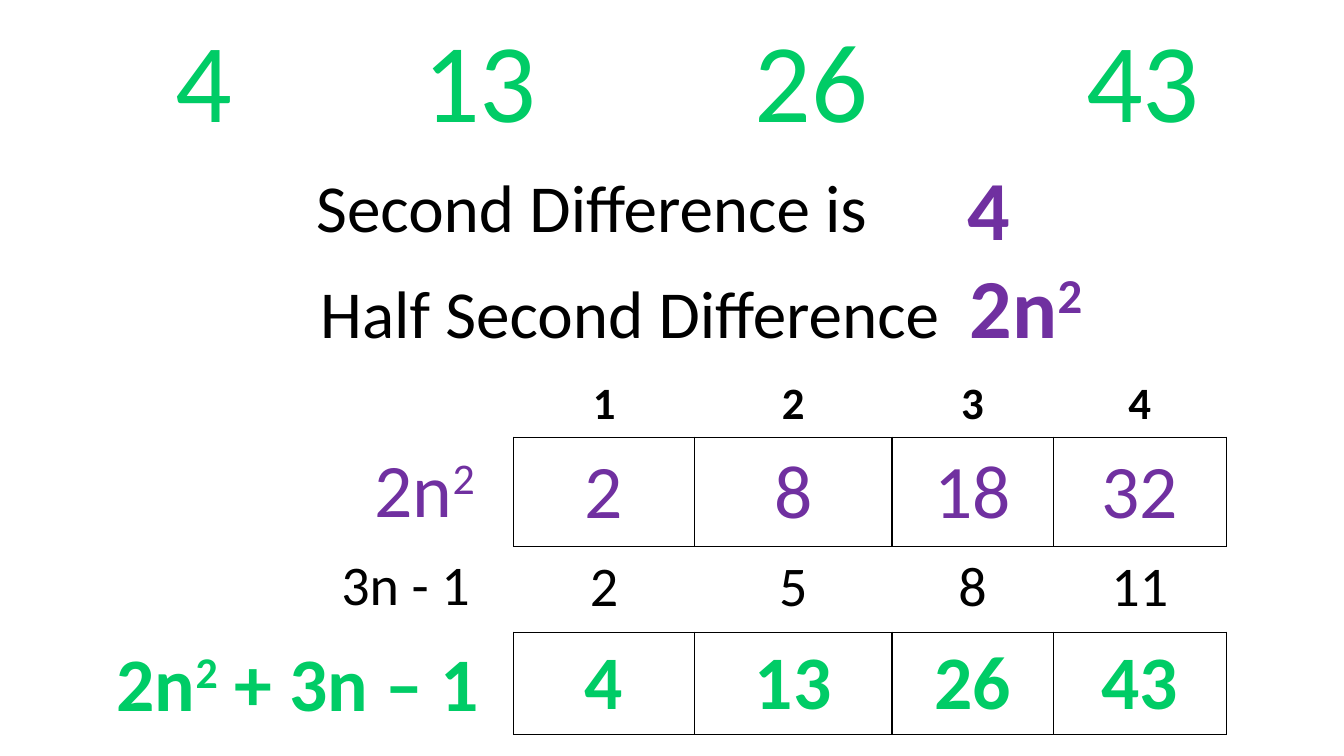
from lxml import etree
from pptx import Presentation
from pptx import util as u
from pptx.dml.color import RGBColor
from pptx.enum import text
from pptx.oxml.ns import qn

GREEN, PURPLE, BLACK, WHITE = "00CC66", "7030A0", "000000", "FFFFFF"
LEFT, CENTER, RIGHT = text.PP_ALIGN.LEFT, text.PP_ALIGN.CENTER, text.PP_ALIGN.RIGHT
TOP, MIDDLE, BOTTOM = text.MSO_ANCHOR.TOP, text.MSO_ANCHOR.MIDDLE, text.MSO_ANCHOR.BOTTOM
NO_STYLE = "{2D5ABB26-0587-4C30-8999-92F81FD0307C}"
SUPER = {"baseline": "30000"}


def style(r, size, color, bold=False):
    r.font.name, r.font.size, r.font.bold = "Calibri", u.Pt(size), bold
    r.font.color.rgb = RGBColor.from_string(color)


def border(cell, sides, color):
    """Draw 1 pt lines on the given sides, in the order L, R, T, B."""
    tcPr = cell._tc.get_or_add_tcPr()
    for i, side in enumerate(sides):
        ln = etree.Element(qn("a:ln" + side), w="12700")
        fill = etree.SubElement(ln, qn("a:solidFill"))
        etree.SubElement(fill, qn("a:srgbClr"), val=color)
        tcPr.insert(i, ln)


prs = Presentation()
prs.slide_width, prs.slide_height = u.Cm(33.87), u.Cm(19.05)
s = prs.slides.add_slide(prs.slide_layouts[6])

# Tables: left, top, column widths, row heights, rows of text,
# size, colour, bold, anchor, borders of each row, border colour
terms = [5.59, 2.36, 3.61, 3.76, 5.59, 3.76, 3.58]
cols = [4.55, 4.98, 4.06, 4.37]
tables = [
    (2.34, 0.36, terms, [3.4], [["4", "", "13", "", "26", "", "43"]],
     80, GREEN, False, BOTTOM, ["LRTB"], WHITE),
    (12.95, 9.37, cols, [1.65, 2.76], [["1", "2", "3", "4"], [""] * 4],
     32, BLACK, True, TOP, ["B", "LRTB"], BLACK),
    (12.95, 15.93, cols, [2.54], [["4", "13", "26", "43"]],
     54, GREEN, True, TOP, ["LRTB"], BLACK),
    (12.95, 11.02, cols, [2.77], [["2", "8", "18", "32"]],
     54, PURPLE, False, MIDDLE, [""], BLACK),
    (12.95, 13.82, cols, [1.96], [["2", "5", "8", "11"]],
     40, BLACK, False, TOP, [""], BLACK),
]
for x, y, widths, heights, rows, size, color, bold, anchor, sides, line in tables:
    frame = s.shapes.add_table(len(heights), len(widths), u.Cm(x), u.Cm(y),
                               u.Cm(sum(widths)), u.Cm(sum(heights)))
    tbl = frame.table
    tbl.first_row = tbl.horz_banding = False
    tbl._tbl.tblPr.find(qn("a:tableStyleId")).text = NO_STYLE
    for col, width in zip(tbl.columns, widths):
        col.width = u.Cm(width)
    for i, height in enumerate(heights):
        tbl.rows[i].height = u.Cm(height)
        for j, value in enumerate(rows[i]):
            cell = tbl.cell(i, j)
            cell.fill.background()
            border(cell, sides[i], line)
            cell.vertical_anchor = anchor
            if anchor == BOTTOM:
                cell.margin_left = cell.margin_right = cell.margin_top = u.Cm(0.03)
                cell.margin_bottom = 0
            if value:
                cell.text_frame.text = value
                p = cell.text_frame.paragraphs[0]
                p.alignment = CENTER
                style(p.runs[0], size, color, bold)

# Labels: left, top, width, height, alignment, wrap,
# runs of (text, size, colour, bold, extra run attributes)
labels = [
    (7.82, 6.3, 20.6, 2.82, LEFT, True,
     [("Half Second Difference", 48, BLACK, False, {}),
      (" ", 48, BLACK, False, {"spc": "1080"}),
      ("2n", 60, PURPLE, True, {}), ("2", 60, PURPLE, True, SUPER)]),
    (7.72, 4.04, 14.6, 2.31, LEFT, True,
     [("Second Difference is", 48, BLACK, False, {})]),
    (9.04, 11, 3.18, 2.57, RIGHT, False,
     [("2n", 54, PURPLE, False, {}), ("2", 54, PURPLE, False, SUPER)]),
    (23.93, 3.81, 2, 2.82, CENTER, True, [("4", 60, PURPLE, True, {})]),
    (8.31, 13.72, 3.78, 1.96, RIGHT, False, [("3n - 1", 40, BLACK, False, {})]),
    (2.69, 15.9, 10.24, 2.57, LEFT, True,
     [("2n", 54, GREEN, True, {}), ("2", 54, GREEN, True, SUPER),
      (" + 3n – 1", 54, GREEN, True, {})]),
]
for x, y, w, h, align, wrap, runs in labels:
    tf = s.shapes.add_textbox(u.Cm(x), u.Cm(y), u.Cm(w), u.Cm(h)).text_frame
    tf.word_wrap = wrap
    tf.auto_size = text.MSO_AUTO_SIZE.SHAPE_TO_FIT_TEXT
    p = tf.paragraphs[0]
    p.alignment = align
    for words, size, color, bold, extra in runs:
        r = p.add_run()
        r.text = words
        style(r, size, color, bold)
        for name, value in extra.items():
            r._r.get_or_add_rPr().set(name, value)

prs.save("out.pptx")
